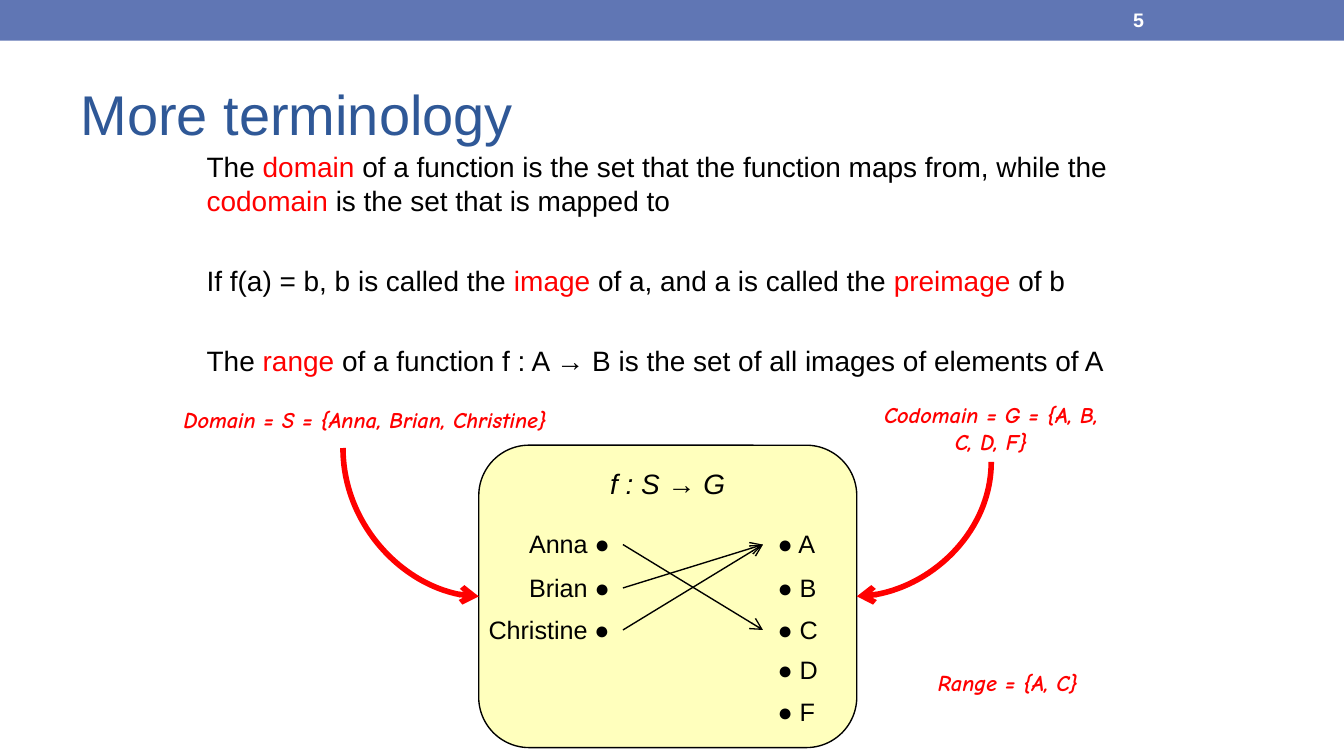
from lxml.etree import SubElement
from pptx import Presentation
from pptx.dml.color import RGBColor
from pptx.enum.shapes import MSO_CONNECTOR, MSO_SHAPE
from pptx.enum.text import MSO_ANCHOR, MSO_AUTO_SIZE, PP_ALIGN
from pptx.oxml.ns import qn
from pptx.util import Emu, Pt

PX = 9525
BLACK, RED, WHITE = "000000", "FF0000", "FFFFFF"
TITLE = {"size": Pt(30), "name": "Arial"}
BODY = {"size": Pt(15), "name": "Arial"}
FORMULA = {**BODY, "italic": True}
MEMBER = {"size": Pt(13.5), "name": "Arial"}
NOTE = {"size": Pt(12), "name": "Comic Neue", "bold": True, "italic": True}
NUMBER = {"size": Pt(10.5), "name": "Arial", "bold": True}

DEFINITIONS = [
    "The |domain |of a function is the set that the function maps from, while the "
    "|codomain |is the set that is mapped to",
    "If f(a) = b, b is called the |image |of a, and a is called the |preimage |of b",
    "The |range |of a function f : A → B is the set of all images of elements of A",
]
ROW_TOPS = [373, 404, 434, 463, 493]
DOMAIN = [("Anna", 85), ("Brian", 85), ("Christine", 114)]
CODOMAIN = ["A", "B", "C", "D", "F"]
MAPPING = [(0, 2), (1, 0), (2, 0)]
NOTES = [
    ("Domain = S = {Anna, Brian, Christine}", (60, 285, 402, 29)),
    ("Codomain = G = {A, B, C, D, F}", (618, 282, 180, 48)),
    ("Range = {A, C}", (630, 473, 180, 29)),
]


def px(*values):
    """Turn pixel lengths into EMU."""
    return [Emu(round(v * PX)) for v in values]


def rgb(value):
    """Turn a hex string into a colour."""
    return RGBColor.from_string(value)


def add_run(p, text, font, color):
    """Add a formatted run to a paragraph."""
    r = p.add_run()
    r.text = text
    for key, value in font.items():
        setattr(r.font, key, value)
    r.font.color.rgb = rgb(color)


def place(sp, box):
    """Move a placeholder to a box."""
    for key, value in zip(("left", "top", "width", "height"), px(*box)):
        setattr(sp, key, value)


def add_title(s, text):
    """Fill the title placeholder."""
    sp = s.shapes.title
    place(sp, (48, 42, 864, 78))
    tf = sp.text_frame
    tf.auto_size = MSO_AUTO_SIZE.NONE
    tf.vertical_anchor = MSO_ANCHOR.MIDDLE
    p = tf.paragraphs[0]
    p.alignment = PP_ALIGN.LEFT
    add_run(p, text, TITLE, "2F5897")


def add_definitions(s):
    """Fill the body placeholder, with every second piece in red."""
    sp = s.placeholders[1]
    place(sp, (138, 102, 684, 372))
    tf = sp.text_frame
    tf.auto_size = MSO_AUTO_SIZE.NONE
    for i, line in enumerate(DEFINITIONS):
        p = tf.add_paragraph() if i else tf.paragraphs[0]
        p.space_before = Pt(25 if i else 3.6)
        pPr = p._p.get_or_add_pPr()
        pPr.set("marL", "0")
        pPr.set("indent", "0")
        SubElement(pPr, qn("a:buNone"))
        for j, piece in enumerate(line.split("|")):
            add_run(p, piece, BODY, RED if j % 2 else BLACK)


def add_text(s, text, box, font, color, align=PP_ALIGN.LEFT, wrap=True, anchor=MSO_ANCHOR.TOP):
    """Add a one-paragraph text box."""
    tf = s.shapes.add_textbox(*px(*box)).text_frame
    tf.word_wrap = wrap
    tf.vertical_anchor = anchor
    p = tf.paragraphs[0]
    p.alignment = align
    add_run(p, text, font, color)


def add_panel(s, kind, box, fill, line=None):
    """Add a filled shape with an optional outline."""
    sp = s.shapes.add_shape(kind, *px(*box))
    sp.shadow.inherit = False
    sp.fill.solid()
    sp.fill.fore_color.rgb = rgb(fill)
    if line:
        sp.line.color.rgb = rgb(line)
        sp.line.width = Pt(0.75)
    else:
        sp.line.fill.background()
    return sp


def add_arrow(s, kind, start, end, color, width):
    """Add a connector with an open arrowhead."""
    c = s.shapes.add_connector(kind, *px(*start, *end))
    c.line.color.rgb = rgb(color)
    c.line.width = Pt(width)
    SubElement(c.line._get_or_add_ln(), qn("a:tailEnd"), type="arrow")
    SubElement(c._element.spPr, qn("a:effectLst"))
    return c


def add_bend(s, start, end):
    """Add a quarter-curve arrow that leaves downwards and arrives sideways."""
    (x1, y1), (x2, y2) = start, end
    turn = 1 if x2 < x1 else -1
    cx, cy = (x1 + x2) / 2, (y1 + y2) / 2
    dx, dy = turn * (y2 - y1) / 2, abs(x2 - x1) / 2
    c = add_arrow(s, MSO_CONNECTOR.CURVE, (cx - dx, cy - dy), (cx + dx, cy + dy), RED, 3)
    spPr = c._element.spPr
    spPr.find(qn("a:prstGeom")).set("prst", "curvedConnector2")
    spPr.find(qn("a:xfrm")).set("rot", str(turn * 90 % 360 * 60000))


def add_mapping(s):
    """Draw the function panel with its members and arrows."""
    sp = add_panel(s, MSO_SHAPE.ROUNDED_RECTANGLE, (342, 318, 270, 216), "FFFFBD", BLACK)
    sp.text_frame.vertical_anchor = MSO_ANCHOR.TOP
    p = sp.text_frame.paragraphs[0]
    p.alignment = PP_ALIGN.CENTER
    add_run(p, "f : S → G", FORMULA, BLACK)
    for (name, width), top in zip(DOMAIN, ROW_TOPS):
        add_text(s, f"{name} ●", (445 - width, top, width, 32), MEMBER, BLACK,
                 PP_ALIGN.RIGHT, wrap=False)
    for grade, top in zip(CODOMAIN, ROW_TOPS):
        add_text(s, f"● {grade}", (546, top, 55, 32), MEMBER, BLACK, wrap=False)
    for i, j in MAPPING:
        add_arrow(s, MSO_CONNECTOR.STRAIGHT, (445, ROW_TOPS[i] + 16),
                  (545, ROW_TOPS[j] + 16), BLACK, 0.75)


def main():
    """Build the slide."""
    prs = Presentation()
    prs.slide_width, prs.slide_height = px(960, 540)
    s = prs.slides.add_slide(prs.slide_layouts[1])
    add_panel(s, MSO_SHAPE.RECTANGLE, (0, 0, 960, 29), "6076B4")
    add_title(s, "More terminology")
    add_definitions(s)
    add_mapping(s)
    for text, box in NOTES:
        add_text(s, text, box, NOTE, RED, PP_ALIGN.CENTER)
    add_bend(s, (245, 320), (342, 426))
    add_bend(s, (708, 330), (612, 426))
    add_text(s, "5", (800, 1, 112, 26), NUMBER, WHITE, anchor=MSO_ANCHOR.MIDDLE)
    prs.save("out.pptx")


if __name__ == "__main__":
    main()
